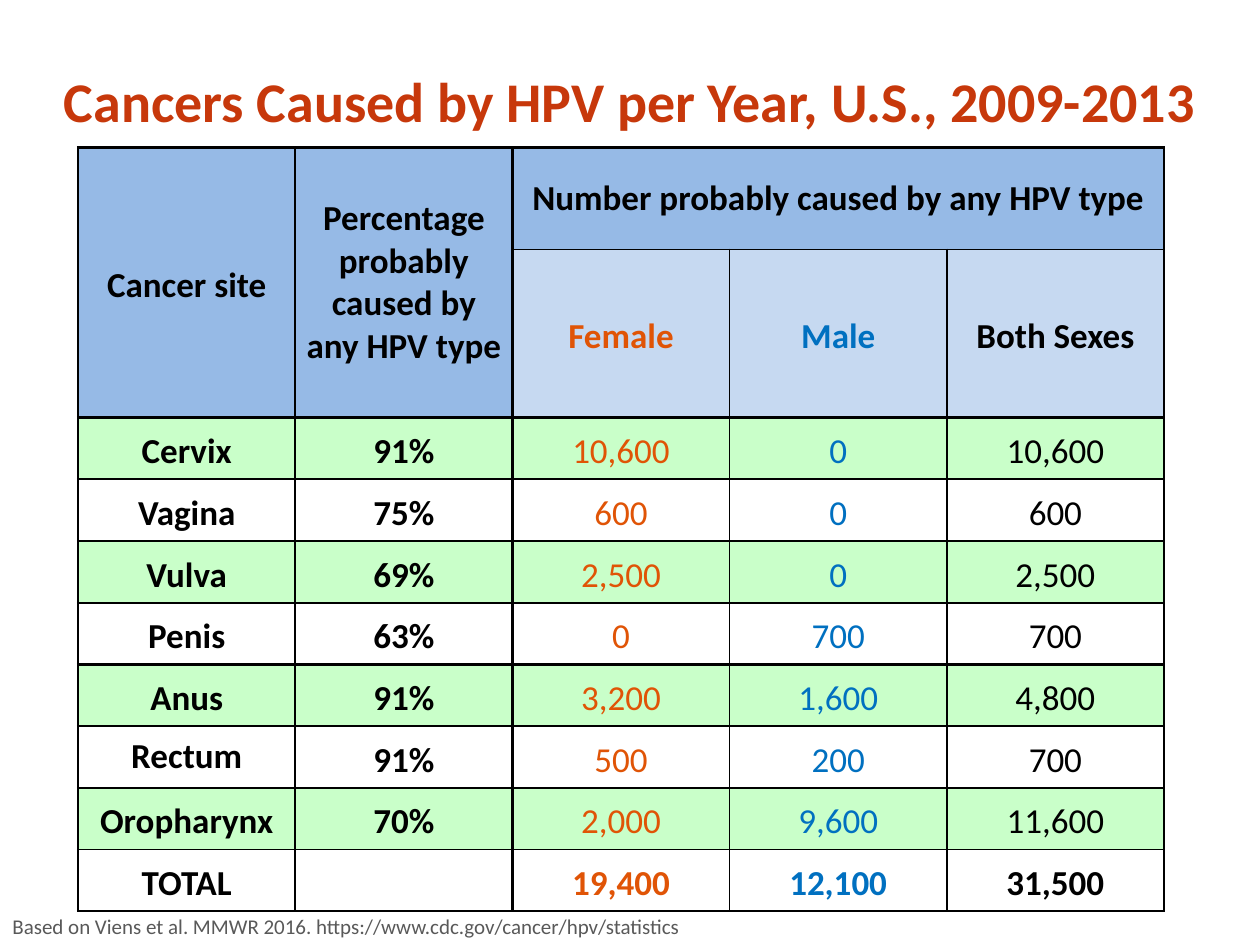
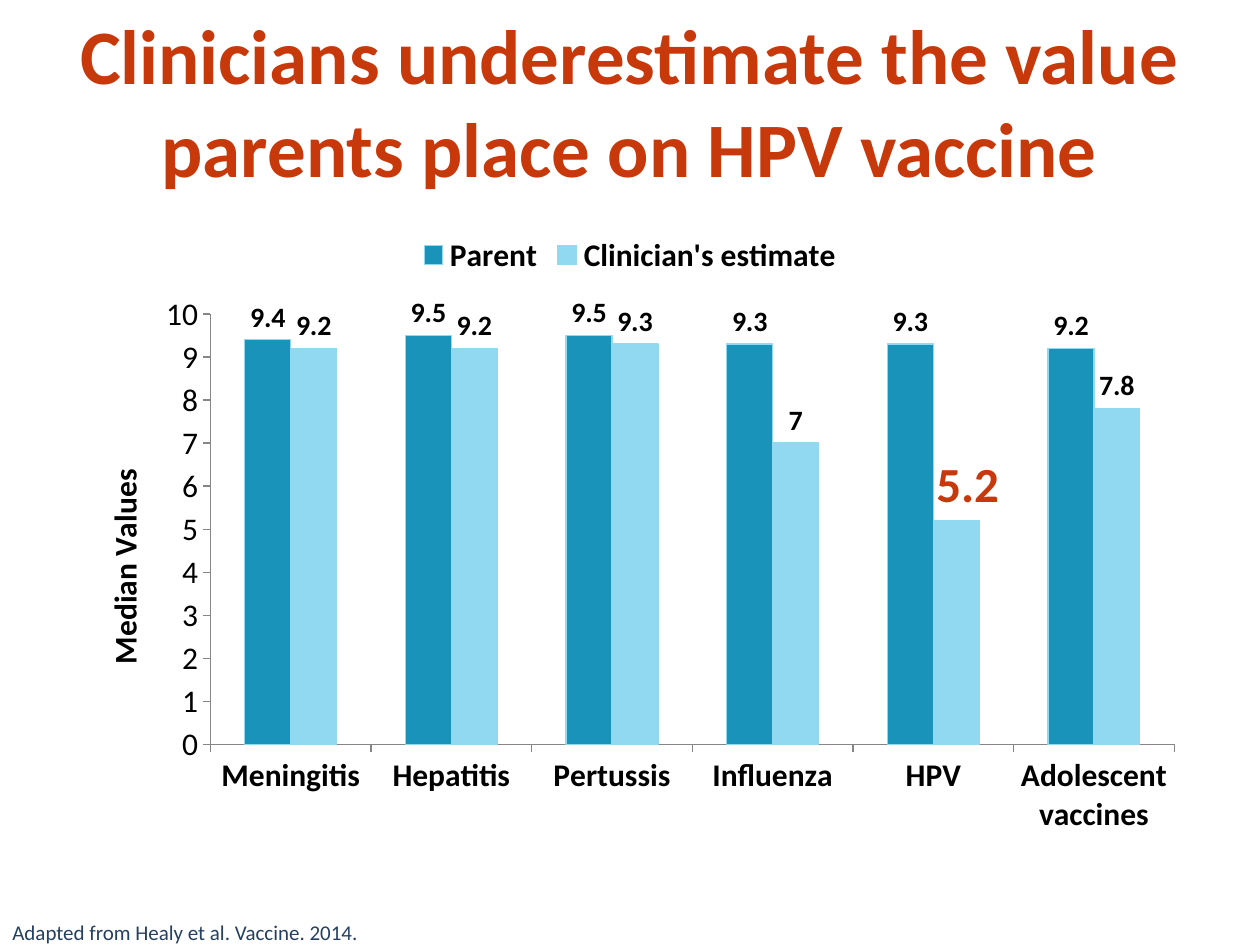
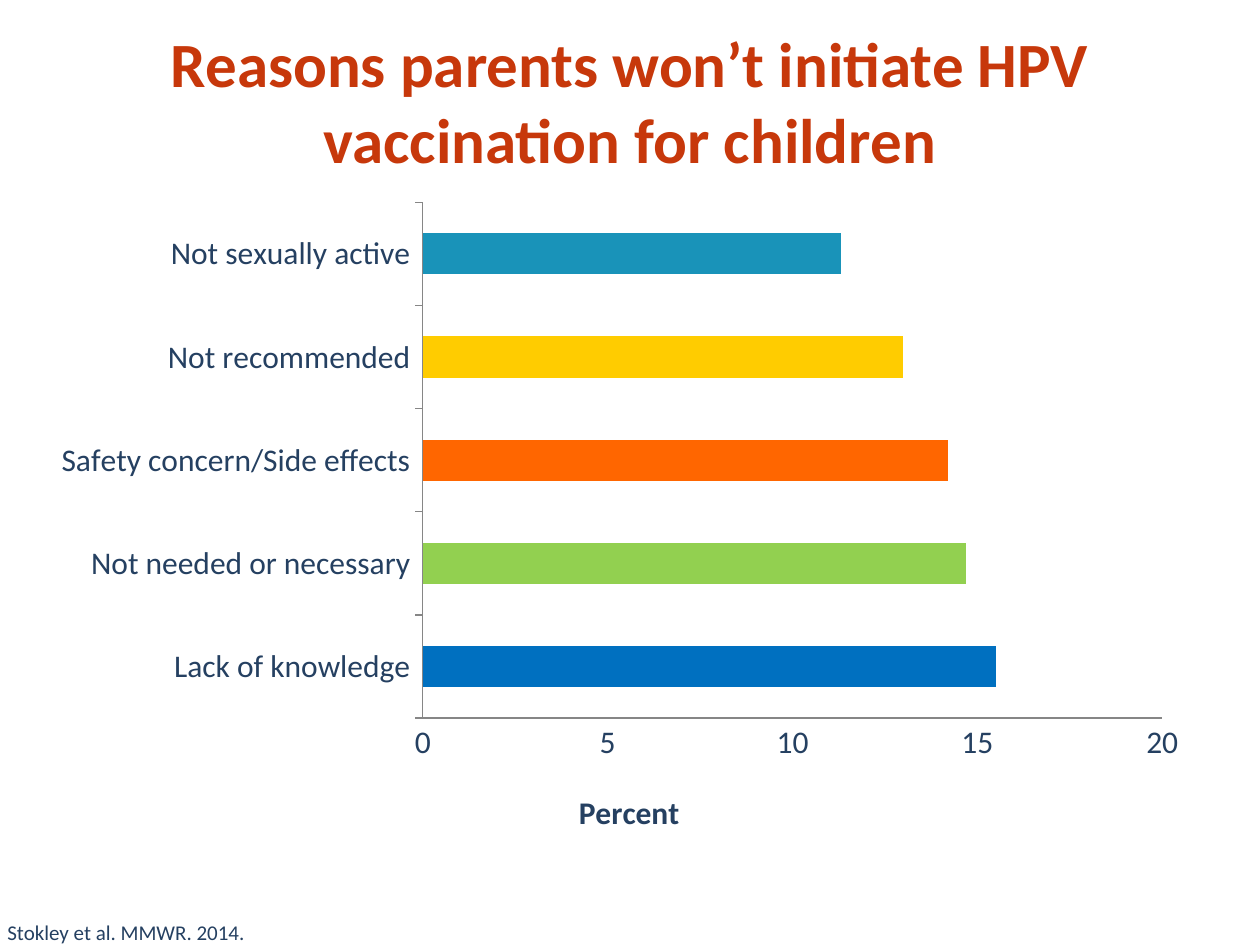
import pptx
import pptx.chart.data
import pptx.dml.color
import pptx.enum.chart
import pptx.enum.text
import pptx.oxml
import pptx.oxml.ns
import pptx.util

RGBColor = pptx.dml.color.RGBColor
Inches = pptx.util.Inches
Pt = pptx.util.Pt
Kind = pptx.enum.chart.XL_CHART_TYPE
Tick = pptx.enum.chart.XL_TICK_MARK
Align = pptx.enum.text.PP_ALIGN
Anchor = pptx.enum.text.MSO_ANCHOR

FONT = "Calibri"
RUST = RGBColor(0xC7, 0x38, 0x0B)
BLACK = RGBColor(0, 0, 0)
WHITE = RGBColor(0xFF, 0xFF, 0xFF)
SLATE = RGBColor(0x59, 0x59, 0x59)
NAVY = RGBColor(0x25, 0x40, 0x61)
GREY = RGBColor(0x86, 0x86, 0x86)
HEAD = RGBColor(0x96, 0xBA, 0xE6)
PALE = RGBColor(0xC6, 0xD9, 0xF1)
MINT = RGBColor(0xC9, 0xFF, 0xC9)
ORANGE = RGBColor(0xE0, 0x54, 0x06)
BLUE = RGBColor(0, 0x70, 0xC0)
TEAL = RGBColor(0x19, 0x93, 0xB9)
SKY = RGBColor(0x90, 0xD9, 0xF0)
GREEN = RGBColor(0x92, 0xD0, 0x50)
AMBER = RGBColor(0xFF, 0x66, 0)
YELLOW = RGBColor(0xFF, 0xCC, 0)

CANCERS = [
    ("Cancer site", "Percentage probably caused by any HPV type",
     "Number probably caused by any HPV type", "", ""),
    ("", "", "Female", "Male", "Both Sexes"),
    ("Cervix", "91%", "10,600", "0", "10,600"),
    ("Vagina", "75%", "600", "0", "600"),
    ("Vulva", "69%", "2,500", "0", "2,500"),
    ("Penis", "63%", "0", "700", "700"),
    ("Anus", "91%", "3,200", "1,600", "4,800"),
    ("Rectum", "91%", "500", "200", "700"),
    ("Oropharynx", "70%", "2,000", "9,600", "11,600"),
    ("TOTAL", "", "19,400", "12,100", "31,500"),
]
TIGHT = {CANCERS[0][1], CANCERS[0][2], "Rectum"}
INKS = [BLACK, BLACK, ORANGE, BLUE, BLACK]
LAST = len(CANCERS) - 1

VACCINES = ["Meningitis", "Hepatitis", "Pertussis", "Influenza", "HPV",
            "Adolescent vaccines"]
RATINGS = [
    ("Parent", (9.4, 9.5, 9.5, 9.3, 9.3, 9.2), TEAL),
    ("Clinician's estimate", (9.2, 9.2, 9.3, 7, 5.2, 7.8), SKY),
]
REASONS = [
    ("Lack of knowledge", 15.5, BLUE),
    ("Not needed or necessary", 14.7, GREEN),
    ("Safety concern/Side effects", 14.2, AMBER),
    ("Not recommended", 13, YELLOW),
    ("Not sexually active", 11.3, TEAL),
]


def style(font, size, color, bold=False):
    font.name, font.size, font.bold = FONT, Pt(size), bold
    font.color.rgb = color


def new_slide(deck, title, size, left, note, note_box, note_color):
    """Add a slide with its title and its source line at the foot."""
    slide = deck.slides.add_slide(deck.slide_layouts[5])
    head = slide.shapes.title
    head.left, head.top = Inches(left), Inches(0.17)
    head.width, head.height = Inches(10 - 2 * left), Inches(1.25)
    frame = head.text_frame
    frame.text = title
    frame.auto_size = pptx.enum.text.MSO_AUTO_SIZE.NONE
    frame.vertical_anchor = Anchor.MIDDLE
    frame.paragraphs[0].alignment = Align.CENTER
    style(frame.paragraphs[0].font, size, RUST, True)

    foot = slide.shapes.add_textbox(*map(Inches, note_box)).text_frame
    foot.word_wrap = True
    foot.text = note
    style(foot.paragraphs[0].font, 12, note_color)
    return slide


def draw_edge(cell, side, width):
    cell._tc.get_or_add_tcPr().append(pptx.oxml.parse_xml(
        f'<a:ln{side} {pptx.oxml.ns.nsdecls("a")} w="{Pt(width)}">'
        f'<a:solidFill><a:srgbClr val="{BLACK}"/></a:solidFill></a:ln{side}>'))


def down_width(edge, row):
    return 1.5 if edge < 3 or row == 0 else 1


def cross_width(edge, col):
    return 1 if edge in (7, 8, 9) or (edge == 1 and col > 1) else 1.5


def cell_fill(row, col):
    if row < 2:
        return PALE if row == 1 and col > 1 else HEAD
    return WHITE if row % 2 else MINT


def fill_cell(cell, row, col, text):
    draw_edge(cell, "L", down_width(col, row))
    draw_edge(cell, "R", down_width(col + 1, row))
    draw_edge(cell, "T", cross_width(row, col))
    draw_edge(cell, "B", cross_width(row + 1, col))
    if row == LAST:
        cell.fill.background()
    else:
        cell.fill.solid()
        cell.fill.fore_color.rgb = cell_fill(row, col)
    cell.margin_left = cell.margin_right = Inches(0.07)
    cell.margin_top = cell.margin_bottom = 0
    cell.vertical_anchor = Anchor.MIDDLE
    cell.text = text
    para = cell.text_frame.paragraphs[0]
    para.alignment = Align.CENTER
    para.line_spacing = 1.0 if text in TIGHT else 1.15
    style(para.font, 20, INKS[col] if row else BLACK,
          row < 2 or row == LAST or col < 2)


def add_cancers(slide):
    heights = [0.81] + [0.49] * LAST
    table = slide.shapes.add_table(
        len(CANCERS), len(INKS), Inches(0.62), Inches(1.17),
        Inches(8.62), Inches(sum(heights))).table
    table.first_row = table.horz_banding = False
    for line, height in zip(table.rows, heights):
        line.height = Inches(height)
    for row, texts in enumerate(CANCERS):
        for col, text in enumerate(texts):
            fill_cell(table.cell(row, col), row, col, text)
    for col in (0, 1):
        table.cell(0, col).merge(table.cell(1, col))
    table.cell(0, 2).merge(table.cell(0, 4))


def place(parent, index, spots, inner=False):
    """Give a chart part a manual layout, as fractions of the chart."""
    for old in parent.findall(pptx.oxml.ns.qn("c:layout")):
        parent.remove(old)
    parts = '<c:layoutTarget val="inner"/>' if inner else ""
    if index < 2 and not inner and parent.tag.endswith("title") or inner:
        parts += '<c:xMode val="edge"/><c:yMode val="edge"/>'
    parts += "".join(f'<c:{key} val="{spot}"/>' for key, spot in zip("xywh", spots))
    parent.insert(index, pptx.oxml.parse_xml(
        f'<c:layout {pptx.oxml.ns.nsdecls("c")}><c:manualLayout>{parts}'
        '</c:manualLayout></c:layout>'))


def add_chart(slide, kind, box, cats, series, color, top, step, title, spot, plot):
    data = pptx.chart.data.CategoryChartData()
    data.categories = cats
    for name, values in series:
        data.add_series(name, values)
    chart = slide.shapes.add_chart(kind, *map(Inches, box), data).chart
    style(chart.font, 18, color)
    chart.has_title = chart.has_legend = False
    chart.plots[0].gap_width = 150
    chart.plots[0].vary_by_categories = False
    for axis in (chart.category_axis, chart.value_axis):
        axis.has_major_gridlines = False
        axis.major_tick_mark, axis.minor_tick_mark = Tick.OUTSIDE, Tick.NONE
        axis.format.line.color.rgb = GREY
        axis.format.line.width = Pt(0.75)
        style(axis.tick_labels.font, 18, color)
    axis = chart.value_axis
    axis.minimum_scale, axis.maximum_scale, axis.major_unit = 0, top, step
    frame = axis.axis_title.text_frame
    frame.text = title
    style(frame.paragraphs[0].font, 18, color, True)
    place(axis.axis_title._element, 1, spot)
    place(chart._chartSpace.chart.plotArea, 0, plot, inner=True)
    return chart


def paint(part, color):
    part.format.fill.solid()
    part.format.fill.fore_color.rgb = color


def add_ratings(slide):
    chart = add_chart(
        slide, Kind.COLUMN_CLUSTERED, (0.5, 1.75, 9, 4.95), VACCINES,
        [rating[:2] for rating in RATINGS], BLACK, 10, 1,
        "Median Values", (0.03, 0.39), (0.13, 0.15, 0.85, 0.69))
    chart.category_axis.tick_labels.font.bold = True
    chart.has_legend = True
    chart.legend.position = pptx.enum.chart.XL_LEGEND_POSITION.TOP
    chart.legend.include_in_layout = False
    style(chart.legend.font, 18, BLACK, True)
    for series, (_, _, color) in zip(chart.plots[0].series, RATINGS):
        paint(series, color)
        series.format.line.color.rgb = SKY
        series.format.line.width = Pt(0.75)
        labels = series.data_labels
        labels.show_value = True
        labels.position = pptx.enum.chart.XL_LABEL_POSITION.OUTSIDE_END
        style(labels.font, 16, BLACK, True)
    low = chart.plots[0].series[1].points[VACCINES.index("HPV")].data_label
    style(low.font, 28, RUST, True)
    low.position = pptx.enum.chart.XL_LABEL_POSITION.OUTSIDE_END
    place(low._get_or_add_dLbl(), 1, (0.01, 0))


def add_reasons(slide):
    names, values, colors = zip(*REASONS)
    chart = add_chart(
        slide, Kind.BAR_CLUSTERED, (0.33, 1.5, 9.17, 5.25), names,
        [("Series 1", values)], NAVY, 20, 5,
        "Percent", (0.46, 0.9), (0.33, 0.02, 0.64, 0.78))
    chart.value_axis.major_tick_mark = Tick.NONE
    for index, color in enumerate(colors):
        paint(chart.plots[0].series[0].points[index], color)


def main():
    deck = pptx.Presentation()
    deck.slide_width, deck.slide_height = Inches(10), Inches(7.5)
    add_cancers(new_slide(
        deck, "Cancers Caused by HPV per Year, U.S., 2009-2013", 32, 0,
        "Based on Viens et al. MMWR 2016. https://www.cdc.gov/cancer/hpv/statistics",
        (0, 7.2, 7.92, 0.3), SLATE))
    add_ratings(new_slide(
        deck, "Clinicians underestimate the value parents place on HPV vaccine",
        44, 0.5, "Adapted from Healy et al. Vaccine. 2014.",
        (0, 7.25, 9, 0.25), NAVY))
    add_reasons(new_slide(
        deck, "Reasons parents won’t initiate HPV vaccination for children",
        36, 0.5, "Stokley et al. MMWR. 2014.", (-0.04, 7.25, 3.08, 0.25), NAVY))
    deck.save("out.pptx")


if __name__ == "__main__":
    main()
